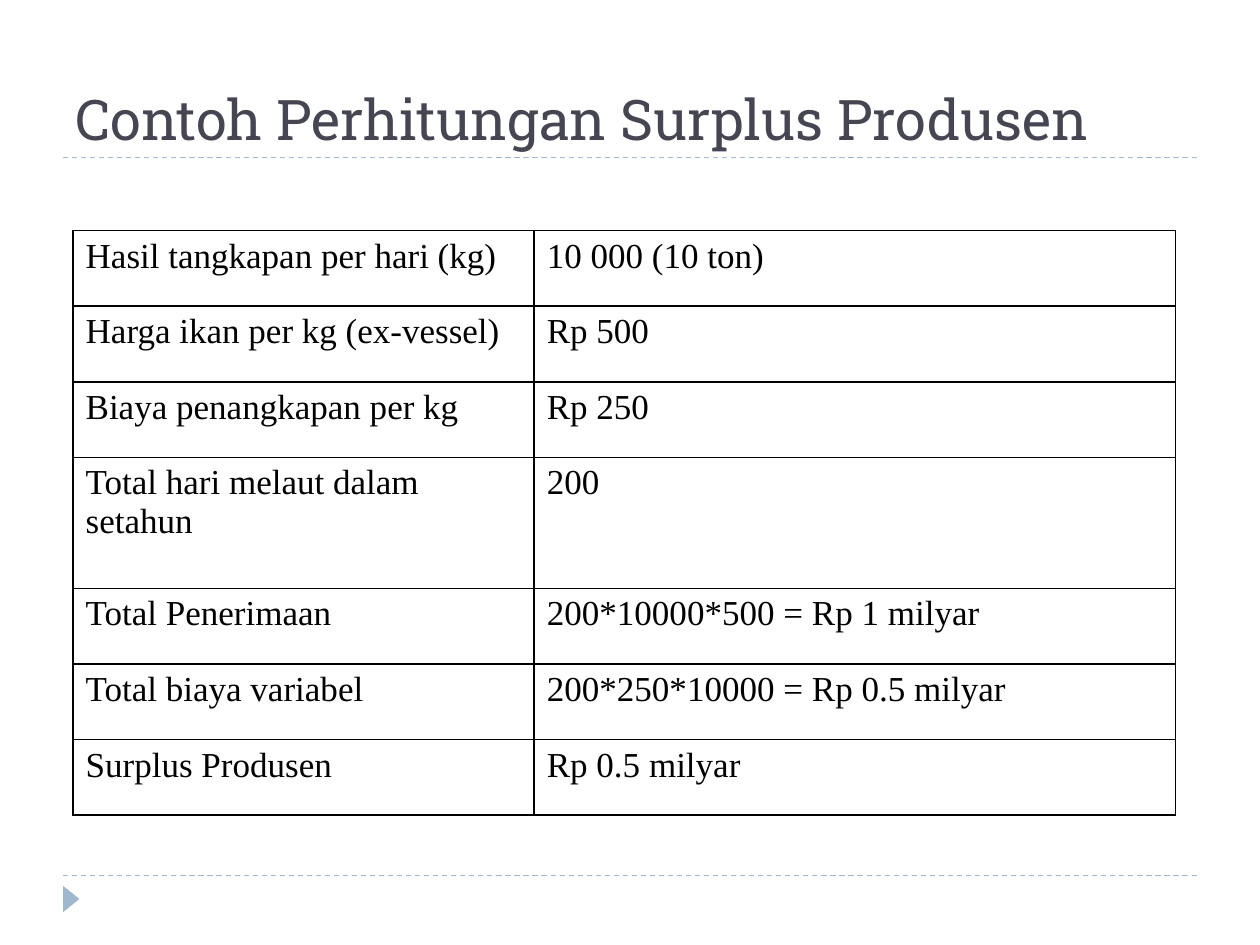
from lxml import etree
from pptx import Presentation
from pptx import util as u
from pptx.dml.color import RGBColor
from pptx.enum import dml, shapes, text
from pptx.oxml import ns

COLORS = {"title": "464653", "accent": "9FB8CD", "ink": "000000"}

ROWS = [
    ("Hasil tangkapan per hari (kg)", "10 000 (10 ton)"),
    ("Harga ikan per kg (ex-vessel)", "Rp 500"),
    ("Biaya penangkapan per kg", "Rp 250"),
    ("Total hari melaut dalam setahun", "200"),
    ("Total Penerimaan", "200*10000*500 = Rp 1 milyar"),
    ("Total biaya variabel", "200*250*10000 = Rp 0.5 milyar"),
    ("Surplus Produsen", "Rp 0.5 milyar"),
]
COLUMN_WIDTHS = (3.66, 5.09)
ROW_HEIGHT, TALL_ROW_HEIGHT, TALL_ROW = 0.6, 1.04, 3


def color(name):
    return RGBColor.from_string(COLORS[name])


def add_run(paragraph, words, size, font, color_name):
    run = paragraph.add_run()
    run.text = words
    run.font.size = u.Pt(size)
    run.font.name = font
    run.font.color.rgb = color(color_name)


def add_rule(slide, y):
    """Dashed line across the slide."""
    rule = slide.shapes.add_connector(
        shapes.MSO_CONNECTOR.STRAIGHT,
        u.Inches(0.5), u.Inches(y), u.Inches(9.5), u.Inches(y))
    rule.line.color.rgb = color("accent")
    rule.line.width = u.Pt(0.75)
    rule.line.dash_style = dml.MSO_LINE.DASH
    etree.SubElement(rule._element.spPr, ns.qn("a:effectLst"))


def add_marker(slide):
    """Triangle pointing right in the footer."""
    marker = slide.shapes.add_shape(
        shapes.MSO_SHAPE.ISOSCELES_TRIANGLE,
        u.Inches(0.46), u.Inches(7.07), u.Inches(0.21), u.Inches(0.13))
    marker.rotation = 90
    marker.shadow.inherit = False
    marker.fill.solid()
    marker.fill.fore_color.rgb = color("accent")
    marker.line.fill.background()


def add_title(slide, words):
    box = slide.shapes.add_textbox(
        u.Inches(0.5), u.Inches(0.17), u.Inches(9), u.Inches(1.08))
    frame = box.text_frame
    frame.word_wrap = True
    frame.vertical_anchor = text.MSO_ANCHOR.BOTTOM
    add_run(frame.paragraphs[0], words, 32, "Roboto Slab", "title")


def set_borders(cell):
    properties = cell._tc.get_or_add_tcPr()
    for side in ("lnL", "lnR", "lnT", "lnB"):
        line = etree.SubElement(properties, ns.qn(f"a:{side}"), w=str(u.Pt(1)))
        fill = etree.SubElement(line, ns.qn("a:solidFill"))
        etree.SubElement(fill, ns.qn("a:srgbClr"), val=COLORS["ink"])


def add_surplus_table(slide):
    heights = [TALL_ROW_HEIGHT if i == TALL_ROW else ROW_HEIGHT
               for i in range(len(ROWS))]
    table = slide.shapes.add_table(
        len(ROWS), len(COLUMN_WIDTHS), u.Inches(0.58), u.Inches(1.83),
        u.Inches(sum(COLUMN_WIDTHS)), u.Inches(sum(heights))).table
    table.first_row = table.horz_banding = False
    for column, width in zip(table.columns, COLUMN_WIDTHS):
        column.width = u.Inches(width)
    for row, height, values in zip(table.rows, heights, ROWS):
        row.height = u.Inches(height)
        for cell, words in zip(row.cells, values):
            set_borders(cell)
            cell.fill.background()
            add_run(cell.text_frame.paragraphs[0], words, 20,
                    "Times New Roman", "ink")


def main():
    presentation = Presentation()
    presentation.slide_width = u.Inches(10)
    presentation.slide_height = u.Inches(7.5)
    slide = presentation.slides.add_slide(presentation.slide_layouts[6])

    # Frame: footer and title rules, footer marker
    for y in (6.95, 1.25):
        add_rule(slide, y)
    add_marker(slide)

    # Content
    add_title(slide, "Contoh Perhitungan Surplus Produsen")
    add_surplus_table(slide)

    presentation.save("out.pptx")


if __name__ == "__main__":
    main()
